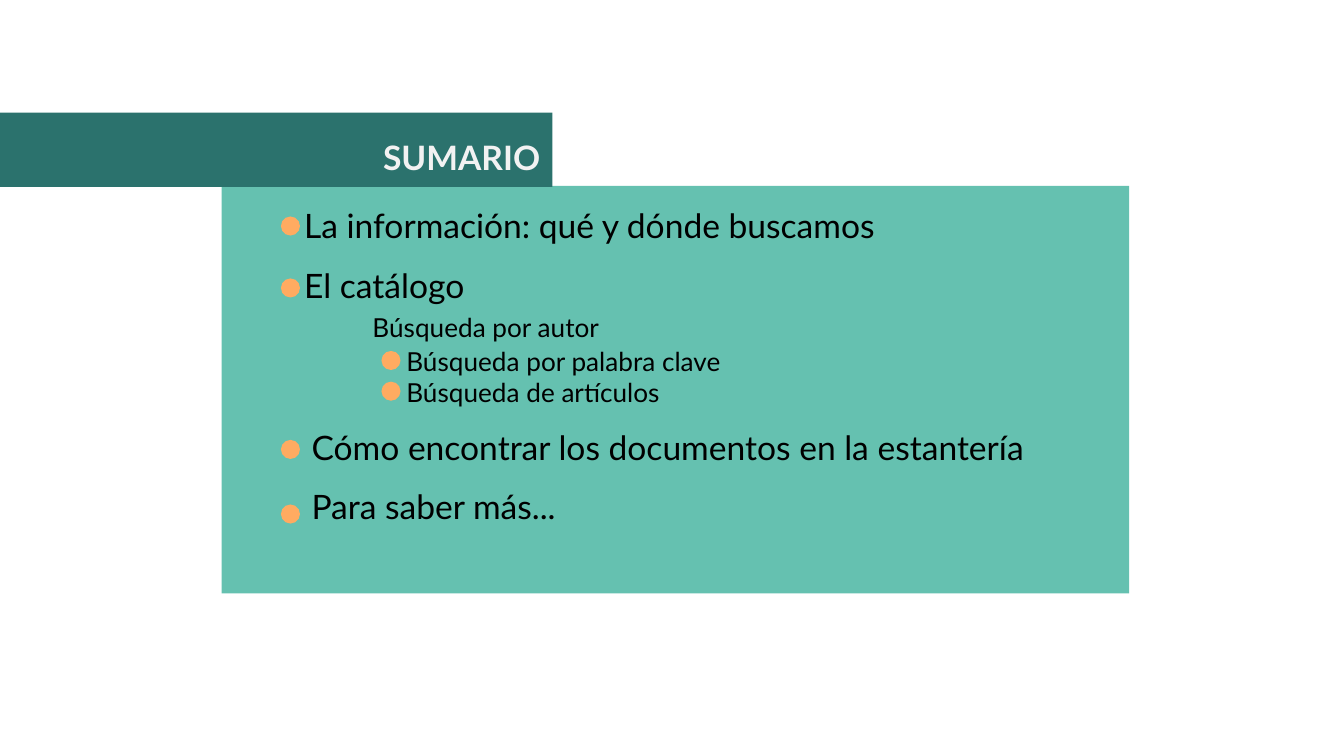
from pptx import Presentation
from pptx.dml.color import RGBColor
from pptx.enum.shapes import MSO_SHAPE
from pptx.enum.text import MSO_ANCHOR, PP_ALIGN
from pptx.util import Cm, Pt

FONT = "Lato"
DARK_GREEN = RGBColor(0x2B, 0x72, 0x6D)
LIGHT_GREEN = RGBColor(0x65, 0xC1, 0xB0)
ORANGE = RGBColor(0xFF, 0xAB, 0x61)
OFF_WHITE = RGBColor(0xF2, 0xF2, 0xF2)
BLACK = RGBColor(0, 0, 0)

TITLE = "SUMARIO"
# text, size (pt), indent (cm), space before (pt), top of the dot (cm) or None
TOPICS = [
    ("La información: qué y dónde buscamos", 18, 0.72, 0, 4.09),
    ("El catálogo", 18, 0.72, 10, 5.26),
    ("Búsqueda por autor", 14, 2.01, 3.8, None),
    ("Búsqueda por palabra clave", 14, 2.65, 1.1, 6.63),
    ("Búsqueda de artículos", 14, 2.65, 0, 7.21),
    ("Cómo encontrar los documentos en la estantería", 18, 0.86, 10, 8.31),
    ("Para saber más...", 18, 0.86, 10, 9.53),
]
DOT_SIZE = 0.36
DOT_LEFT = {18: 5.31, 14: 7.21}


def add_filled_shape(slide, kind, left, top, width, height, color):
    shape = slide.shapes.add_shape(kind, Cm(left), Cm(top), Cm(width), Cm(height))
    shape.shadow.inherit = False
    shape.fill.solid()
    shape.fill.fore_color.rgb = color
    shape.line.fill.background()


def prepare_frame(frame):
    frame.word_wrap = True
    frame.vertical_anchor = MSO_ANCHOR.TOP
    frame.margin_left = frame.margin_right = Cm(0.25)
    frame.margin_top = frame.margin_bottom = Cm(0.25)


def write(paragraph, text, size, color, bold=False, align=PP_ALIGN.LEFT,
          space_before=0, indent=0):
    paragraph.alignment = align
    paragraph.space_before = Pt(space_before)
    paragraph.line_spacing = 1.0
    if indent:
        properties = paragraph._p.get_or_add_pPr()
        properties.set("marL", str(Cm(indent)))
        properties.set("indent", "0")
    run = paragraph.add_run()
    run.text = text
    run.font.name = FONT
    run.font.size = Pt(size)
    run.font.bold = bold
    run.font.color.rgb = color


def main():
    presentation = Presentation()
    presentation.slide_width = Cm(25.4)
    presentation.slide_height = Cm(14.28)
    slide = presentation.slides.add_slide(presentation.slide_layouts[5])

    add_filled_shape(slide, MSO_SHAPE.RECTANGLE, 4.19, 3.51, 17.15, 7.7, LIGHT_GREEN)
    add_filled_shape(slide, MSO_SHAPE.RECTANGLE, 0, 2.13, 10.44, 1.4, DARK_GREEN)

    title = slide.shapes.title
    title.left, title.top = Cm(4.57), Cm(2.34)
    title.width, title.height = Cm(5.89), Cm(0.91)
    prepare_frame(title.text_frame)
    write(title.text_frame.paragraphs[0], TITLE, 18, OFF_WHITE,
          bold=True, align=PP_ALIGN.RIGHT)
    # The title placeholder comes first in the tree; bring it above the band.
    slide.shapes._spTree.append(title._element)

    summary = slide.shapes.add_textbox(Cm(4.78), Cm(3.63), Cm(16.1), Cm(7.21))
    frame = summary.text_frame
    prepare_frame(frame)
    for index, (text, size, indent, space_before, dot_top) in enumerate(TOPICS):
        paragraph = frame.add_paragraph() if index else frame.paragraphs[0]
        write(paragraph, text, size, BLACK, space_before=space_before, indent=indent)
        if dot_top is not None:
            add_filled_shape(slide, MSO_SHAPE.OVAL, DOT_LEFT[size], dot_top,
                             DOT_SIZE, DOT_SIZE, ORANGE)

    presentation.save("out.pptx")


if __name__ == "__main__":
    main()
